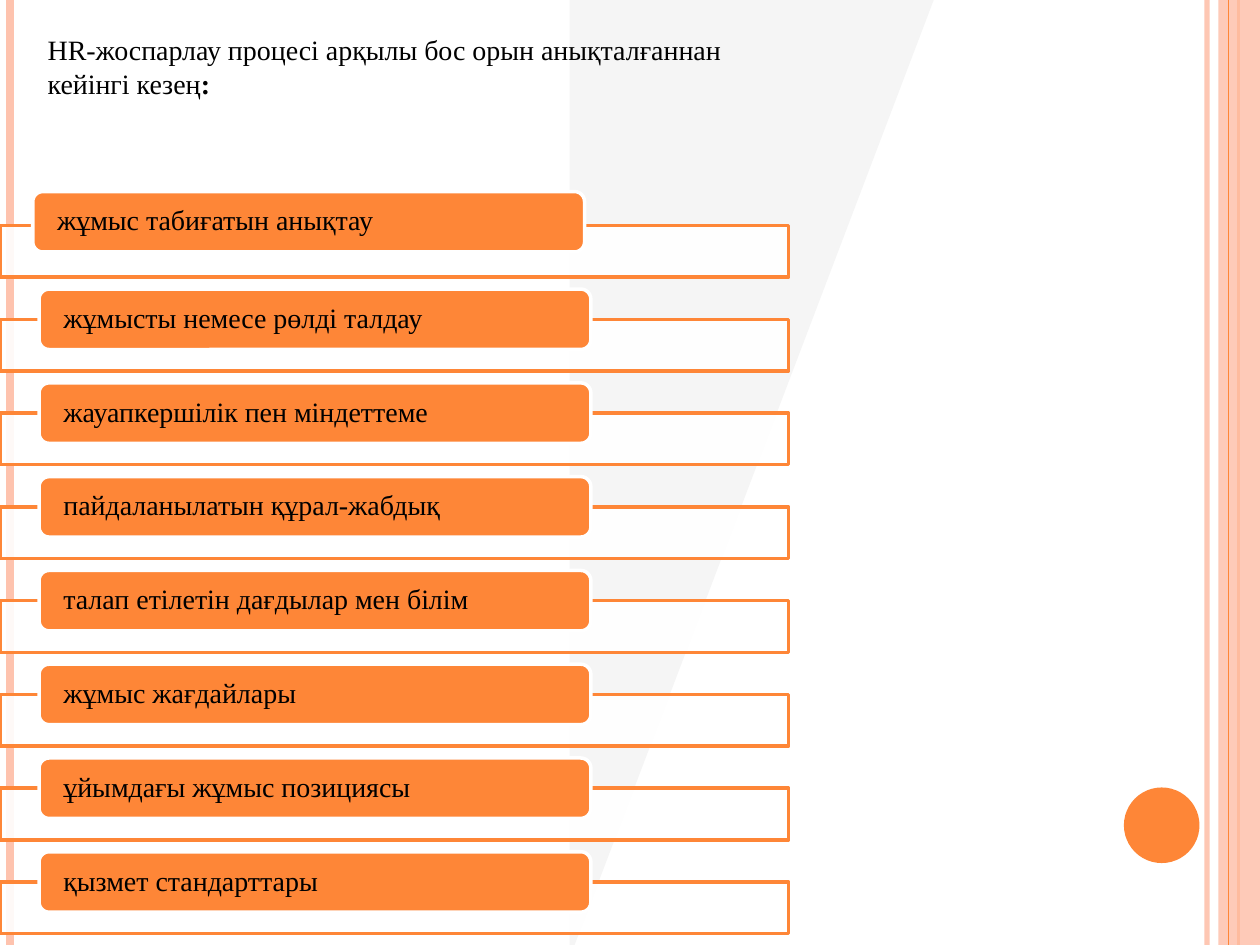
"""Build a slide listing the steps that follow HR planning."""
from lxml.etree import SubElement
from pptx import Presentation
from pptx.dml.color import RGBColor
from pptx.enum.shapes import MSO_CONNECTOR, MSO_SHAPE
from pptx.enum.text import MSO_ANCHOR, PP_ALIGN
from pptx.oxml.ns import qn
from pptx.util import Inches, Pt

ORANGE = RGBColor(0xFE, 0x86, 0x37)
PEACH = RGBColor(0xFE, 0xC3, 0xAE)
PALE_GRAY = RGBColor(0xF2, 0xF2, 0xF2)
WHITE = RGBColor(0xFF, 0xFF, 0xFF)
BLACK = RGBColor(0, 0, 0)
FONT = "Times New Roman"
WIDTH, HEIGHT = 10, 7.5

TITLE = [("HR-жоспарлау процесі арқылы бос орын анықталғаннан кейінгі кезең", False), (":", True)]
STEPS = [
    "жұмыс табиғатын анықтау",
    "жұмысты немесе рөлді талдау",
    "жауапкершілік пен міндеттеме",
    "пайдаланылатын құрал-жабдық",
    "талап етілетін дағдылар мен білім",
    "жұмыс жағдайлары",
    "ұйымдағы жұмыс позициясы",
    "қызмет стандарттары",
]
OUTER_STRIPES = [(9.58, PEACH, 3, 93), (0.08, PEACH, 4.5, 100), (9.83, ORANGE, 1.5, 100)]
INNER_STRIPE = (9.75, ORANGE, 0.75, 100)
WEDGE = [(4.52, 0), (7.41, 0), (4.56, HEIGHT), (4.52, HEIGHT)]

FIRST_BAR_TOP, LAST_BAR_TOP = 1.79, 7
BAR_WIDTH, BAR_HEIGHT = 6.26, 0.41
TAB_WIDTH, TAB_HEIGHT = 4.38, 0.48
FIRST_TAB_LEFT, TAB_LEFT = 0.26, 0.31
FIRST_TAB_RISE, TAB_RISE = 0.27, 0.24


def set_opacity(fill_parent, percent):
    color = fill_parent.find(qn("a:solidFill"))[0]
    SubElement(color, qn("a:alpha")).set("val", str(percent * 1000))


def style_shape(shape, fill, line=None, opacity=100):
    shape.shadow.inherit = False
    shape.fill.solid()
    shape.fill.fore_color.rgb = fill
    if opacity < 100:
        set_opacity(shape.element.spPr, opacity)
    if line is None:
        shape.line.fill.background()
    else:
        shape.line.color.rgb = line
        shape.line.width = Pt(2)


def add_box(slide, kind, box, fill, line=None, opacity=100):
    shape = slide.shapes.add_shape(kind, *map(Inches, box))
    style_shape(shape, fill, line, opacity)
    return shape


def add_stripe(slide, left, color, width, opacity):
    stripe = slide.shapes.add_connector(
        MSO_CONNECTOR.STRAIGHT, Inches(left), 0, Inches(left), Inches(HEIGHT))
    stripe.line.color.rgb = color
    stripe.line.width = Pt(width)
    if opacity < 100:
        set_opacity(stripe.line._get_or_add_ln(), opacity)
    SubElement(stripe.element.spPr, qn("a:effectLst"))


def add_run(paragraph, text, bold=False):
    run = paragraph.add_run()
    run.text = text
    run.font.name = FONT
    run.font.size = Pt(16)
    run.font.bold = bold
    run.font.color.rgb = BLACK


def add_background(slide):
    for stripe in OUTER_STRIPES:
        add_stripe(slide, *stripe)
    add_box(slide, MSO_SHAPE.RECTANGLE, (9.67, 0, WIDTH - 9.67, HEIGHT), PEACH, opacity=87)
    add_stripe(slide, *INNER_STRIPE)
    add_box(slide, MSO_SHAPE.OVAL, (8.92, 6.25, 0.6, 0.6), ORANGE)
    points = [(Inches(x), Inches(y)) for x, y in WEDGE]
    builder = slide.shapes.build_freeform(*points[0])
    builder.add_line_segments(points[1:], close=True)
    style_shape(builder.convert_to_shape(), PALE_GRAY, opacity=77)


def add_step(slide, index, text):
    pitch = (LAST_BAR_TOP - FIRST_BAR_TOP) / (len(STEPS) - 1)
    bar_top = FIRST_BAR_TOP + index * pitch
    left, rise = (TAB_LEFT, TAB_RISE) if index else (FIRST_TAB_LEFT, FIRST_TAB_RISE)
    add_box(slide, MSO_SHAPE.RECTANGLE, (0, bar_top, BAR_WIDTH, BAR_HEIGHT), WHITE, ORANGE, 90)
    tab = add_box(slide, MSO_SHAPE.ROUNDED_RECTANGLE,
                  (left, bar_top - rise, TAB_WIDTH, TAB_HEIGHT), ORANGE, WHITE)
    frame = tab.text_frame
    frame.word_wrap = True
    frame.vertical_anchor = MSO_ANCHOR.MIDDLE
    frame.margin_left = frame.margin_right = Inches(0.17)
    frame.margin_top = frame.margin_bottom = 0
    paragraph = frame.paragraphs[0]
    paragraph.alignment = PP_ALIGN.JUSTIFY
    paragraph.line_spacing = 0.9
    add_run(paragraph, text)


def add_title(slide):
    box = slide.shapes.add_textbox(*map(Inches, (0.28, 0.21, 5.98, 0.64)))
    box.text_frame.word_wrap = True
    for text, bold in TITLE:
        add_run(box.text_frame.paragraphs[0], text, bold)


def main():
    presentation = Presentation()
    presentation.slide_width = Inches(WIDTH)
    presentation.slide_height = Inches(HEIGHT)
    slide = presentation.slides.add_slide(presentation.slide_layouts[6])
    add_background(slide)
    for index, text in enumerate(STEPS):
        add_step(slide, index, text)
    add_title(slide)
    presentation.save("out.pptx")


if __name__ == "__main__":
    main()
